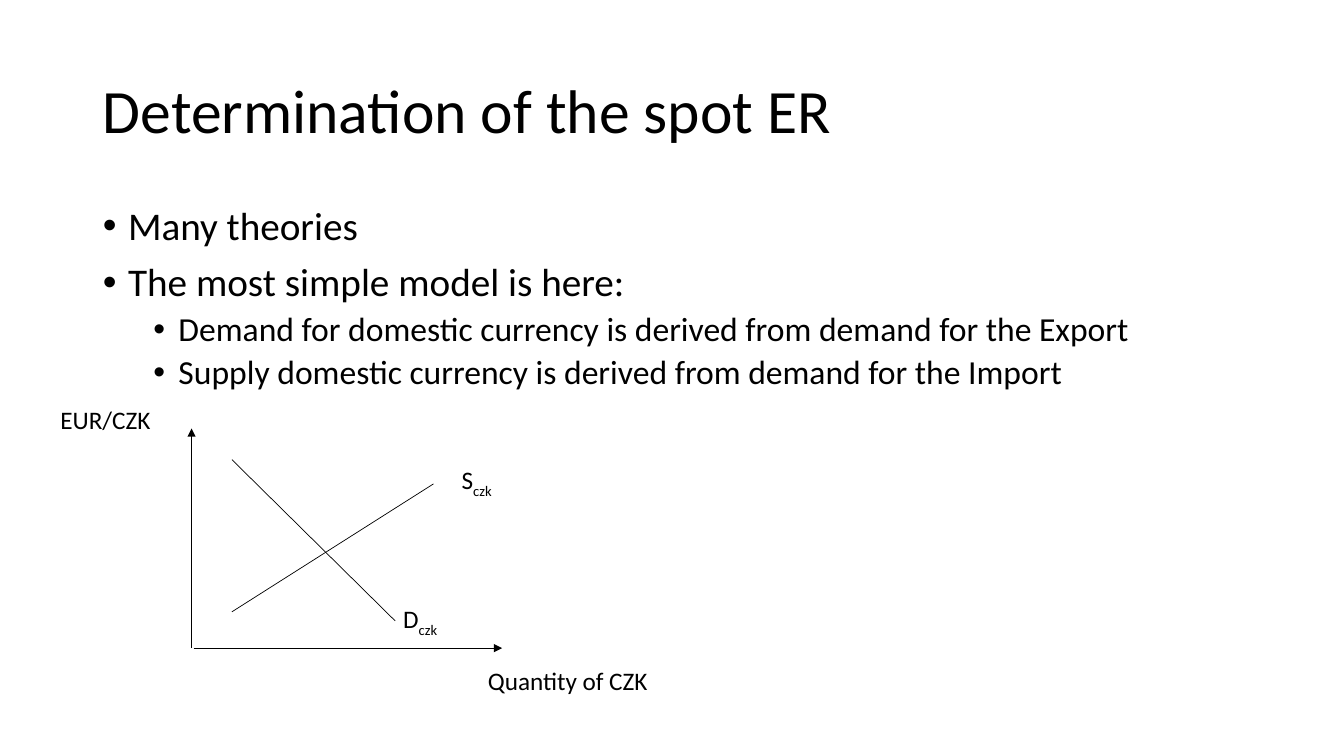
from typing import NamedTuple

from lxml import etree
from pptx import Presentation
from pptx import util as u
from pptx.dml.color import RGBColor
from pptx.enum import shapes, text
from pptx.oxml.ns import qn

FONT = "Calibri"
BLACK = "000000"


class Bullet(NamedTuple):
    text: str
    level: int


class Line(NamedTuple):
    x1: float
    y1: float
    x2: float
    y2: float
    arrow: bool = False


class Label(NamedTuple):
    x: float
    y: float
    width: float
    text: str
    subscript: str = ""


BULLETS = [
    Bullet("Many theories", 0),
    Bullet("The most simple model is here:", 0),
    Bullet("Demand for domestic currency is derived from demand for the Export", 1),
    Bullet("Supply domestic currency is derived from demand for the Import", 1),
]
LINES = [
    Line(1.9, 6.43, 1.9, 4.25, arrow=True),  # price axis
    Line(1.92, 6.43, 4.98, 6.43, arrow=True),  # quantity axis
    Line(2.3, 6.07, 4.3, 4.8),  # supply
    Line(2.3, 4.56, 3.92, 6.16),  # demand
]
LABELS = [
    Label(0.5, 3.96, 1.27, "EUR/CZK"),
    Label(4.74, 6.55, 2.62, "Quantity of CZK"),
    Label(4.48, 4.56, 0.98, "S", "czk"),
    Label(3.9, 5.94, 0.98, "D", "czk"),
]


def color(hex_value: str) -> RGBColor:
    return RGBColor.from_string(hex_value)


def format_runs(p, size: float) -> None:
    for r in p.runs:
        r.font.name = FONT
        r.font.size = u.Pt(size)
        r.font.color.rgb = color(BLACK)


def place(sp, x: float, y: float, width: float, height: float) -> None:
    sp.left, sp.top = u.Inches(x), u.Inches(y)
    sp.width, sp.height = u.Inches(width), u.Inches(height)


def fill_title(sp, title: str) -> None:
    place(sp, 0.92, 0.4, 11.5, 1.45)
    tf = sp.text_frame
    tf.text = title
    tf.auto_size = text.MSO_AUTO_SIZE.NONE
    tf.vertical_anchor = text.MSO_ANCHOR.MIDDLE
    p = tf.paragraphs[0]
    p.alignment = text.PP_ALIGN.LEFT
    p.line_spacing = 0.9
    format_runs(p, 44)


def fill_body(sp, bullets: list[Bullet]) -> None:
    place(sp, 0.92, 2, 11.5, 1.97)
    tf = sp.text_frame
    tf.text = "\n".join(b.text for b in bullets)
    tf.auto_size = text.MSO_AUTO_SIZE.NONE
    for p, b in zip(tf.paragraphs, bullets):
        p.level = b.level
        p.line_spacing = 0.9
        p.space_before = u.Pt(5 if b.level else 10)
        format_runs(p, 24 if b.level else 28)
        pPr = p._p.get_or_add_pPr()
        pPr.set("marL", str(u.Inches(0.25 + 0.5 * b.level)))
        pPr.set("indent", str(u.Inches(-0.25)))
        etree.SubElement(pPr, qn("a:buFont"), typeface="Arial")
        etree.SubElement(pPr, qn("a:buChar"), char="•")


def add_line(s, line: Line) -> None:
    ends = [u.Inches(v) for v in line[:4]]
    connector = s.shapes.add_connector(shapes.MSO_CONNECTOR.STRAIGHT, *ends)
    connector.line.color.rgb = color(BLACK)
    connector.line.width = u.Pt(0.5)
    if line.arrow:
        etree.SubElement(connector.line._get_or_add_ln(), qn("a:tailEnd"), type="triangle")
    etree.SubElement(connector._element.spPr, qn("a:effectLst"))


def add_label(s, label: Label) -> None:
    box = [u.Inches(v) for v in (label.x, label.y, label.width, 0.4)]
    tf = s.shapes.add_textbox(*box).text_frame
    tf.text = label.text
    tf.word_wrap = True
    tf.auto_size = text.MSO_AUTO_SIZE.SHAPE_TO_FIT_TEXT
    p = tf.paragraphs[0]
    if label.subscript:
        r = p.add_run()
        r.text = label.subscript
        r.font._element.set("baseline", "-25000")
    format_runs(p, 18)


def main() -> None:
    prs = Presentation()
    prs.slide_width, prs.slide_height = u.Inches(13.33), u.Inches(7.5)
    s = prs.slides.add_slide(prs.slide_layouts[1])

    # Title and list
    fill_title(s.shapes.title, "Determination of the spot ER")
    fill_body(s.placeholders[1], BULLETS)

    # Supply and demand diagram
    for line in LINES:
        add_line(s, line)
    for label in LABELS:
        add_label(s, label)

    prs.save("out.pptx")


if __name__ == "__main__":
    main()
